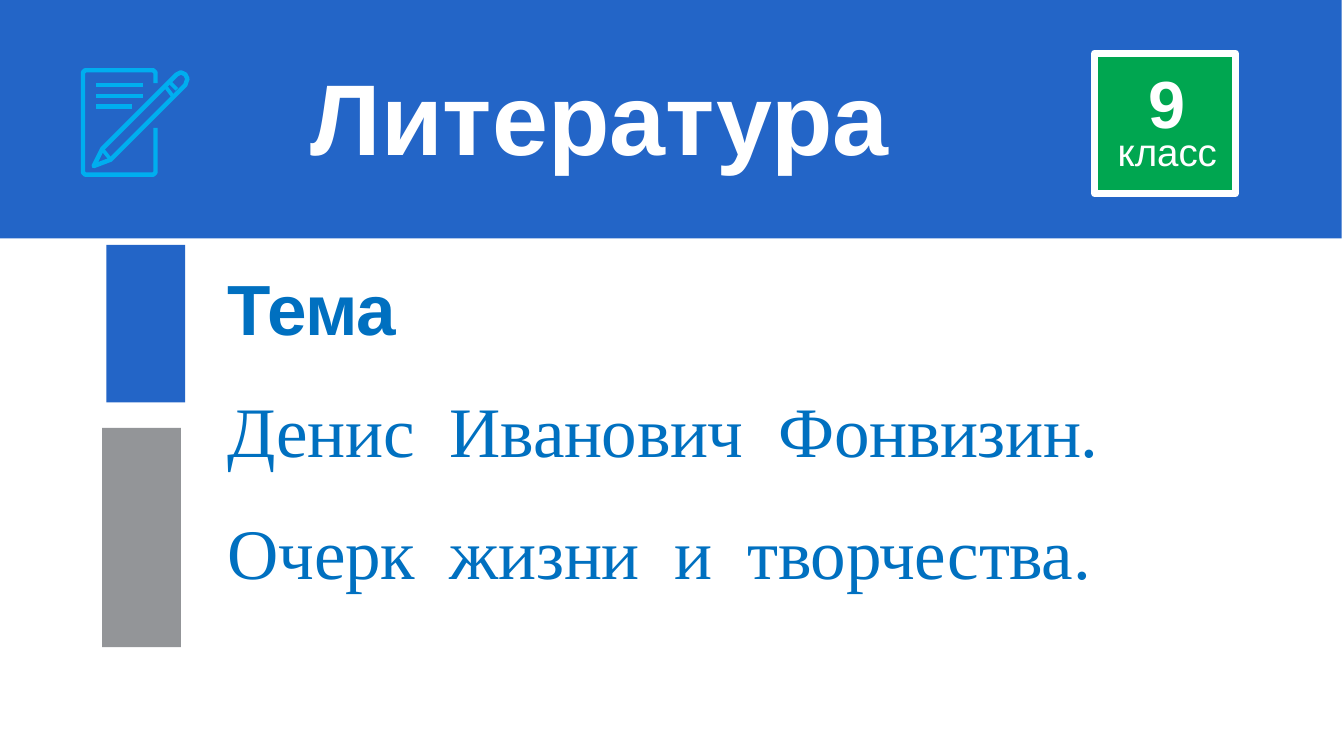
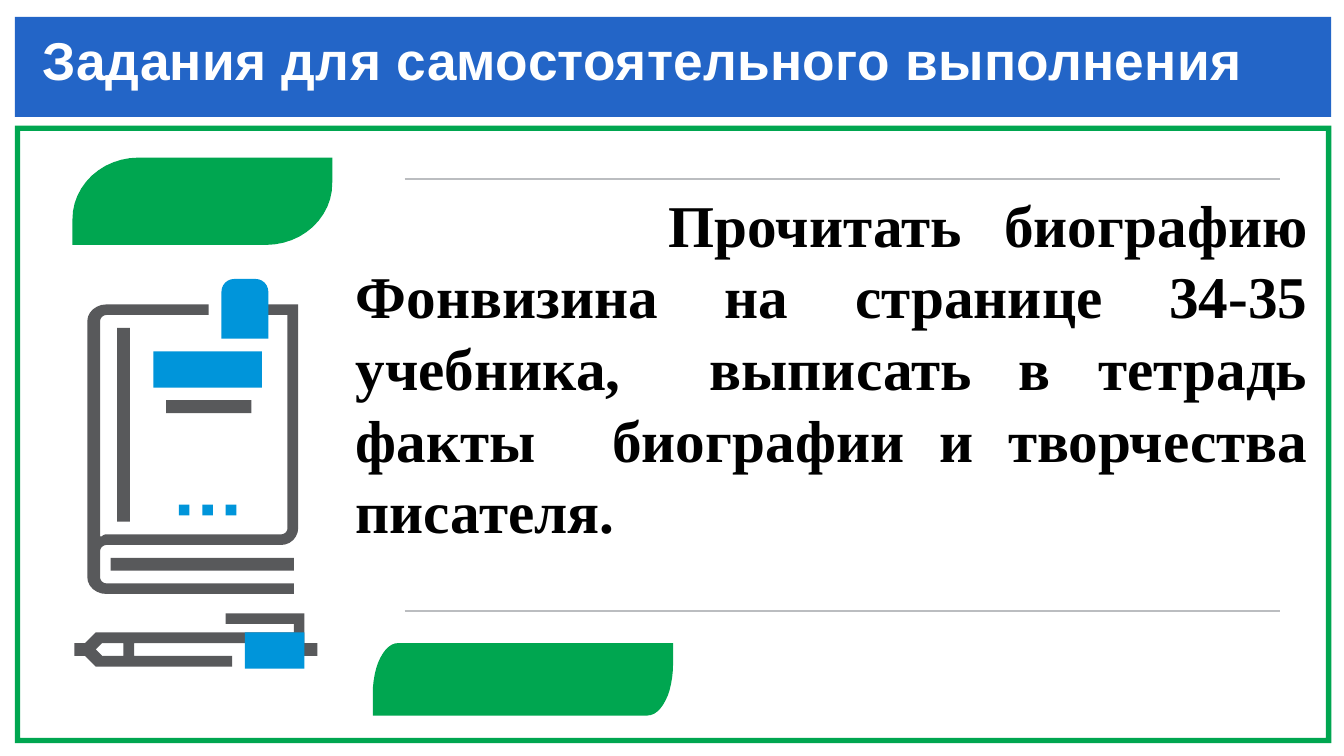
from math import cos, pi, sin

from lxml.etree import SubElement
from pptx import Presentation
from pptx.dml.color import RGBColor
from pptx.enum.shapes import MSO_CONNECTOR, MSO_SHAPE as SHAPE
from pptx.enum.text import PP_ALIGN as ALIGN
from pptx.oxml.ns import qn
from pptx.util import Inches, Pt

BLUE, GREEN, WHITE, BLACK = "2365C7", "00A650", "FFFFFF", "000000"
TOPIC_BLUE, CYAN, SKY = "0070C0", "00AEEF", "0095DA"
GRAY, DARK_GRAY, RULE_GRAY = "939598", "58595B", "BBBDC0"
SANS, SERIF = "Arial", "Times New Roman"
WIDE_SPACE = "~"  # marks a widened word space


def rgb(value):
    return RGBColor.from_string(value)


def rect(x, y, w, h):
    return [(x, y), (x + w, y), (x + w, y + h), (x, y + h)]


def arc(cx, cy, rx, ry, start, end, steps=6):
    """Points of an ellipse between two angles in degrees, clockwise on screen."""
    angles = [(start + (end - start) * i / steps) * pi / 180 for i in range(steps + 1)]
    return [(cx + rx * cos(a), cy + ry * sin(a)) for a in angles]


class Lesson:
    """Holds the style of the lesson and the slide being built."""

    def __init__(self):
        self.deck = Presentation()
        self.deck.slide_width, self.deck.slide_height = Inches(6.31), Inches(3.55)
        self.shapes = None

    def new_slide(self):
        self.shapes = self.deck.slides.add_slide(self.deck.slide_layouts[6]).shapes

    def paint(self, shape, fill=None, line=None, width=1):
        shape.shadow.inherit = False
        for part, colour in ((shape.fill, fill), (shape.line.fill, line)):
            if colour:
                part.solid()
                part.fore_color.rgb = rgb(colour)
            else:
                part.background()
        if line:
            shape.line.width = Pt(width)
        return shape

    def box(self, x, y, w, h, fill=None, line=None, width=1, kind=SHAPE.RECTANGLE):
        shape = self.shapes.add_shape(kind, Inches(x), Inches(y), Inches(w), Inches(h))
        return self.paint(shape, fill, line, width)

    def outline(self, contours, fill=None, line=None, width=1, close=True):
        """One freeform made of one or more contours."""
        builder = None
        for points in contours:
            corners = [(Inches(x), Inches(y)) for x, y in points]
            if builder:
                builder.move_to(*corners[0])
            else:
                builder = self.shapes.build_freeform(*corners[0])
            builder.add_line_segments(corners[1:], close=close)
        return self.paint(builder.convert_to_shape(), fill, line, width)

    def line(self, x1, y1, x2, y2, colour, width):
        connector = self.shapes.add_connector(
            MSO_CONNECTOR.STRAIGHT, Inches(x1), Inches(y1), Inches(x2), Inches(y2))
        connector.line.color.rgb = rgb(colour)
        connector.line.width = Pt(width)
        SubElement(connector._element.spPr, qn("a:effectLst"))

    def leaf(self, x, y, w, h, rx, ry):
        """Green plate with two opposite corners rounded."""
        half = arc(x + rx, y + ry, rx, ry, 180, 270, 12) + [(x + w, y)]
        turned = [(2 * x + w - px, 2 * y + h - py) for px, py in half]
        self.outline([half + turned], GREEN)

    def text(self, x, y, w, h, lines, align=ALIGN.LEFT, leading=None, gap=0,
             indent=0, tracking=0, widening=6):
        """Each line is (text, size, colour, font, bold)."""
        frame = self.shapes.add_textbox(
            Inches(x), Inches(y), Inches(w), Inches(h)).text_frame
        frame.word_wrap = True
        frame.margin_left = frame.margin_right = 0
        frame.margin_top = frame.margin_bottom = 0
        for number, (words, size, colour, font, bold) in enumerate(lines):
            paragraph = frame.add_paragraph() if number else frame.paragraphs[0]
            paragraph.alignment = align
            paragraph.space_after = Pt(gap)
            if leading:
                paragraph.line_spacing = Pt(leading)
            if indent:
                paragraph._p.get_or_add_pPr().set("indent", str(Inches(indent)))
            paragraph.font.size, paragraph.font.bold = Pt(size), bold
            paragraph.font.name, paragraph.font.color.rgb = font, rgb(colour)
            for piece_number, piece in enumerate(words.split(WIDE_SPACE)):
                if piece_number:
                    self.add_run(paragraph, " ", widening)
                self.add_run(paragraph, piece, tracking)

    def add_run(self, paragraph, words, tracking):
        run = paragraph.add_run()
        run.text = words
        if tracking:
            run._r.get_or_add_rPr().set("spc", str(round(tracking * 100)))

    def title(self, words, x, y, w, h, size, tracking):
        self.text(x, y, w, h, [(words, size, WHITE, SANS, True)], tracking=tracking)

    def band(self, x, y, w, h):
        self.box(x, y, w, h, BLUE)

    # Icons
    def note_icon(self):
        sheet = [(0.73, 0.39), (0.73, 0.34), (0.72, 0.33), (0.4, 0.33), (0.39, 0.34),
                 (0.39, 0.81), (0.4, 0.82), (0.72, 0.82), (0.73, 0.81), (0.73, 0.6)]
        pencil = [(0.44, 0.78), (0.48, 0.7), (0.83, 0.35), (0.85, 0.34), (0.87, 0.35),
                  (0.88, 0.37), (0.87, 0.4), (0.52, 0.75)]
        self.outline([sheet], line=CYAN, width=1.5, close=False)
        self.outline([pencil], line=CYAN, width=1.5)
        for x1, y1, x2, y2 in ((0.48, 0.7, 0.52, 0.75), (0.78, 0.41, 0.81, 0.45),
                               (0.8, 0.39, 0.83, 0.42)):
            self.line(x1, y1, x2, y2, CYAN, 1.25)
        for row, right in enumerate((0.67, 0.67, 0.62)):
            y = 0.4 + 0.05 * row
            self.line(0.45, y, right, y, CYAN, 1.5)

    def book_icon(self):
        cover = [
            (1.4, 1.43), (1.24, 1.43), (1.24, 1.48), (1.35, 1.48),
            *arc(1.32, 2.48, 0.03, 0.03, 0, 90), *arc(0.5, 2.54, 0.03, 0.03, 270, 225),
            (0.47, 2.52), *arc(0.5, 1.51, 0.03, 0.03, 180, 270), (0.98, 1.48),
            (0.98, 1.43), *arc(0.5, 1.51, 0.09, 0.08, 270, 180),
            *arc(0.5, 2.71, 0.09, 0.08, 180, 90), (1.38, 2.79), (1.38, 2.74),
            *arc(0.5, 2.71, 0.03, 0.03, 90, 180), *arc(0.5, 2.59, 0.03, 0.03, 180, 270),
            *arc(1.32, 2.48, 0.08, 0.08, 90, 0)]
        bars = [rect(0.55, 1.54, 0.06, 0.91), rect(0.78, 1.88, 0.4, 0.06),
                rect(0.52, 2.62, 0.86, 0.06)]
        self.outline([cover, *bars], DARK_GRAY)
        bookmark = [*arc(1.1, 1.37, 0.06, 0.06, 180, 270),
                    *arc(1.2, 1.37, 0.06, 0.06, 270, 360), (1.26, 1.59), (1.04, 1.59)]
        dots = [rect(0.84 + 0.11 * dot, 2.37, 0.05, 0.05) for dot in range(3)]
        self.outline([bookmark, rect(0.72, 1.65, 0.51, 0.17), *dots], SKY)

    def pen_icon(self):
        barrel = [(1.43, 2.88), (1.06, 2.88), (1.06, 2.93), (1.38, 2.93), (1.38, 2.97),
                  (0.45, 2.97), (0.4, 3.02), (0.35, 3.02), (0.35, 3.08), (0.4, 3.08),
                  (0.45, 3.13), (1.09, 3.13), (1.09, 3.08), (0.48, 3.08),
                  (0.45, 3.05), (0.48, 3.02), (1.43, 3.02)]
        self.outline([barrel, rect(0.58, 3.02, 0.05, 0.06),
                      rect(1.38, 3.02, 0.11, 0.06)], DARK_GRAY)
        self.box(1.15, 2.97, 0.28, 0.17, SKY)


def topic_slide(lesson):
    lesson.new_slide()
    # Header
    lesson.band(0, 0, 6.3, 1.12)
    lesson.title("Литература", 1.46, 0.26, 3.2, 0.55, 34, 0)
    lesson.note_icon()

    # Grade badge
    lesson.box(5.14, 0.25, 0.66, 0.66, GREEN, WHITE, 2.4)
    for words, y, size, bold in (("9", 0.29, 22.5, True), ("класс", 0.6, 13, False)):
        lesson.text(5.14, y, 0.68, size / 60, [(words, size, WHITE, SANS, bold)],
                    ALIGN.CENTER)

    # Topic
    lesson.box(0.5, 1.15, 0.37, 0.74, BLUE)
    lesson.box(0.48, 2.01, 0.37, 1.03, GRAY)
    lesson.text(1.07, 1.37, 5.1, 1.47, [
        ("Тема", 24, TOPIC_BLUE, SANS, True),
        ("Денис~Иванович~Фонвизин.", 24, TOPIC_BLUE, SERIF, False),
        ("Очерк~жизни~и~творчества.", 24, TOPIC_BLUE, SERIF, False),
    ], leading=19.5, gap=21.7, tracking=-0.1, widening=5.8)


def homework_slide(lesson):
    lesson.new_slide()
    # Frame and header
    border = lesson.box(0.07, 0.59, 6.18, 2.9, GREEN, kind=SHAPE.FRAME)
    border.adjustments[0] = 0.025 / 2.9
    lesson.band(0.07, 0.08, 6.18, 0.47)
    lesson.title("Задания для самостоятельного выполнения",
                 0.2, 0.13, 6, 0.32, 18, 0.1)

    # Task between two rules
    for y in (0.84, 2.87):
        lesson.line(1.9, y, 6.01, y, RULE_GRAY, 0.5)
    task = ("Прочитать биографию Фонвизина на странице 34-35 учебника,~выписать "
            "в тетрадь факты~биографии и творчества писателя.")
    lesson.text(1.67, 0.88, 4.47, 1.75, [(task, 20, BLACK, SERIF, True)],
                ALIGN.JUSTIFY, leading=24.25, indent=1.47, widening=14)

    # Decoration
    lesson.leaf(0.34, 0.74, 1.22, 0.41, 0.31, 0.29)
    lesson.leaf(1.75, 3.02, 1.41, 0.34, 0.12, 0.24)
    lesson.book_icon()
    lesson.pen_icon()


def main():
    lesson = Lesson()
    topic_slide(lesson)
    homework_slide(lesson)
    lesson.deck.save("out.pptx")


if __name__ == "__main__":
    main()
